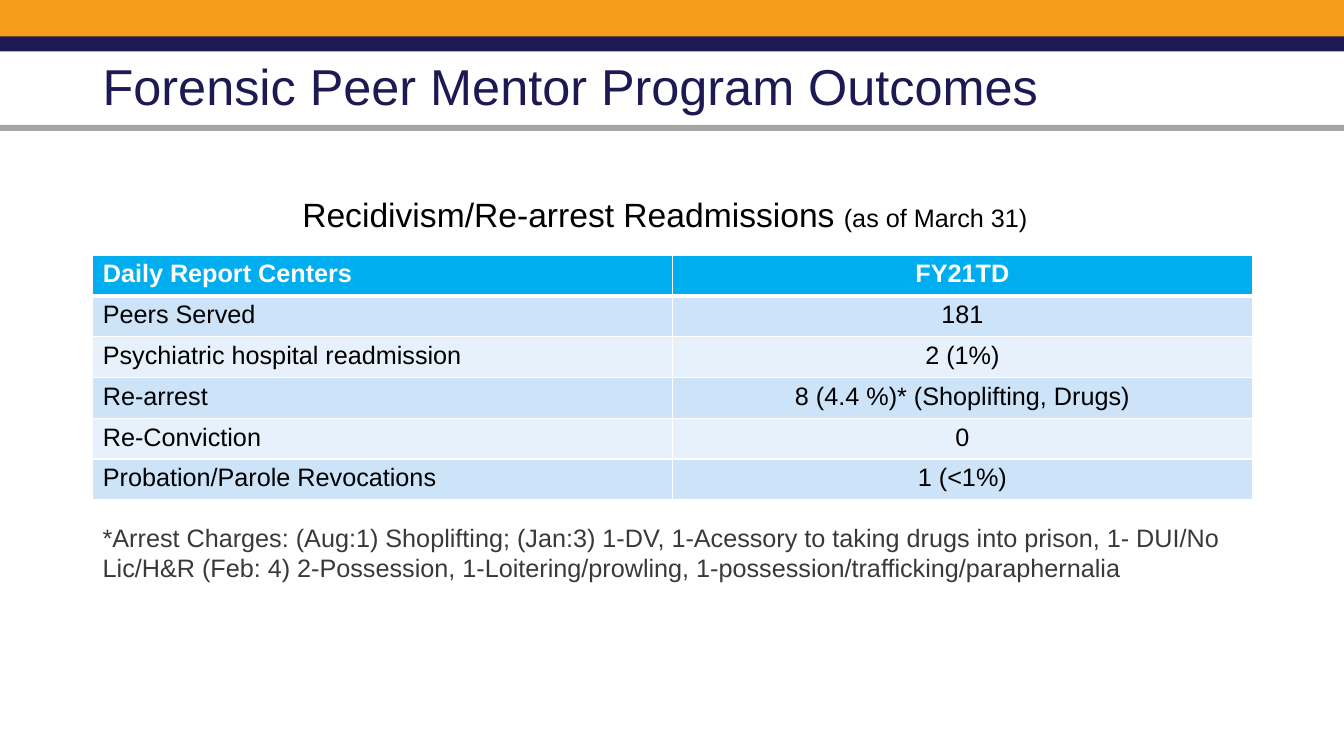
from lxml import etree
from pptx import Presentation
from pptx import util as u
from pptx.dml.color import RGBColor
from pptx.enum import shapes, text
from pptx.oxml.ns import qn

ORANGE = RGBColor(0xF8, 0x9C, 0x1B)
NAVY = RGBColor(0x1D, 0x19, 0x53)
GREY = RGBColor(0xA5, 0xA5, 0xA5)
DARK = RGBColor(0x3B, 0x38, 0x38)
BLACK = RGBColor(0, 0, 0)
WHITE = RGBColor(0xFF, 0xFF, 0xFF)
HEADER_BLUE = RGBColor(0x00, 0xAD, 0xEE)
BANDS = RGBColor(0xCC, 0xE3, 0xF8), RGBColor(0xE7, 0xF1, 0xFC)

WIDTH, HEIGHT = u.Inches(13.33), u.Inches(7.5)
MARGIN = u.Inches(0.92)
CONTENT = u.Inches(11.5)
ROW = u.Inches(0.405)

OUTCOMES = [
    ("Daily Report Centers", "FY21TD"),
    ("Peers Served", "181"),
    ("Psychiatric hospital readmission", "2 (1%)"),
    ("Re-arrest", "8 (4.4 %)* (Shoplifting, Drugs)"),
    ("Re-Conviction", "0"),
    ("Probation/Parole Revocations", "1 (<1%)"),
]
CHARGES = (
    "*Arrest Charges: (Aug:1) Shoplifting; (Jan:3) 1-DV, 1-Acessory to taking "
    "drugs into prison, 1- DUI/No Lic/H&R (Feb: 4) 2-Possession, "
    "1-Loitering/prowling, 1-possession/trafficking/paraphernalia"
)


def add_run(p, words, size, color, bold=False):
    r = p.add_run()
    r.text = words
    r.font.name = "Arial"
    r.font.size = u.Pt(size)
    r.font.bold = bold
    r.font.color.rgb = color


def add_text(s, box, runs, wrap=True):
    """Place one paragraph of (words, size, colour) runs in the box."""
    tf = s.shapes.add_textbox(*box).text_frame
    tf.word_wrap = wrap
    for run in runs:
        add_run(tf.paragraphs[0], *run)
    return tf


def add_bands(s):
    for top, height, color in ((0, 0.4, ORANGE), (0.36, 0.15, NAVY), (1.24, 0.06, GREY)):
        sp = s.shapes.add_shape(shapes.MSO_SHAPE.RECTANGLE, 0, u.Inches(top),
                                WIDTH, u.Inches(height))
        sp.shadow.inherit = False
        sp.fill.solid()
        sp.fill.fore_color.rgb = color
        sp.line.fill.background()


def add_title(s, box):
    tf = add_text(s, box, [("Forensic Peer Mentor Program Outcomes", 36, NAVY)])
    tf.vertical_anchor = text.MSO_ANCHOR.MIDDLE
    tf.paragraphs[0].line_spacing = 0.9


def set_borders(cell, **widths):
    """Draw white cell edges; widths are points keyed by L, R, T and B."""
    tc_pr = cell._tc.get_or_add_tcPr()
    for i, (side, width) in enumerate(widths.items()):
        ln = etree.Element(qn(f"a:ln{side}"), w=str(u.Pt(width)))
        fill = etree.SubElement(ln, qn("a:solidFill"))
        etree.SubElement(fill, qn("a:srgbClr"), val=str(WHITE))
        tc_pr.insert(i, ln)


def add_outcomes(s, box):
    table = s.shapes.add_table(len(OUTCOMES), len(OUTCOMES[0]), *box).table
    for i, row in enumerate(OUTCOMES):
        header = i == 0
        for j, words in enumerate(row):
            cell = table.cell(i, j)
            cell.fill.solid()
            cell.fill.fore_color.rgb = HEADER_BLUE if header else BANDS[(i - 1) % 2]
            set_borders(cell, L=1, R=1, T=3 if i == 1 else 1, B=3 if header else 1)
            p = cell.text_frame.paragraphs[0]
            p.alignment = text.PP_ALIGN.CENTER if j else text.PP_ALIGN.LEFT
            add_run(p, words, 18, WHITE if header else BLACK, header)


def build_slide(prs):
    s = prs.slides.add_slide(prs.slide_layouts[6])
    add_bands(s)
    add_title(s, (MARGIN, u.Inches(0.16), CONTENT, u.Inches(1.45)))
    add_outcomes(s, (MARGIN, u.Inches(2.53), CONTENT, ROW * len(OUTCOMES)))
    add_text(s, (MARGIN, u.Inches(5.13), CONTENT, u.Inches(0.71)),
             [(CHARGES, 18, DARK)])
    add_text(s, (u.Inches(2.9), u.Inches(1.87), u.Inches(7.54), u.Inches(0.5)),
             [("Recidivism/Re-arrest Readmissions ", 24, BLACK),
              ("(as of March 31)", 18, BLACK)], wrap=False)


def main():
    prs = Presentation()
    prs.slide_width, prs.slide_height = WIDTH, HEIGHT
    build_slide(prs)
    prs.save("out.pptx")


if __name__ == "__main__":
    main()
